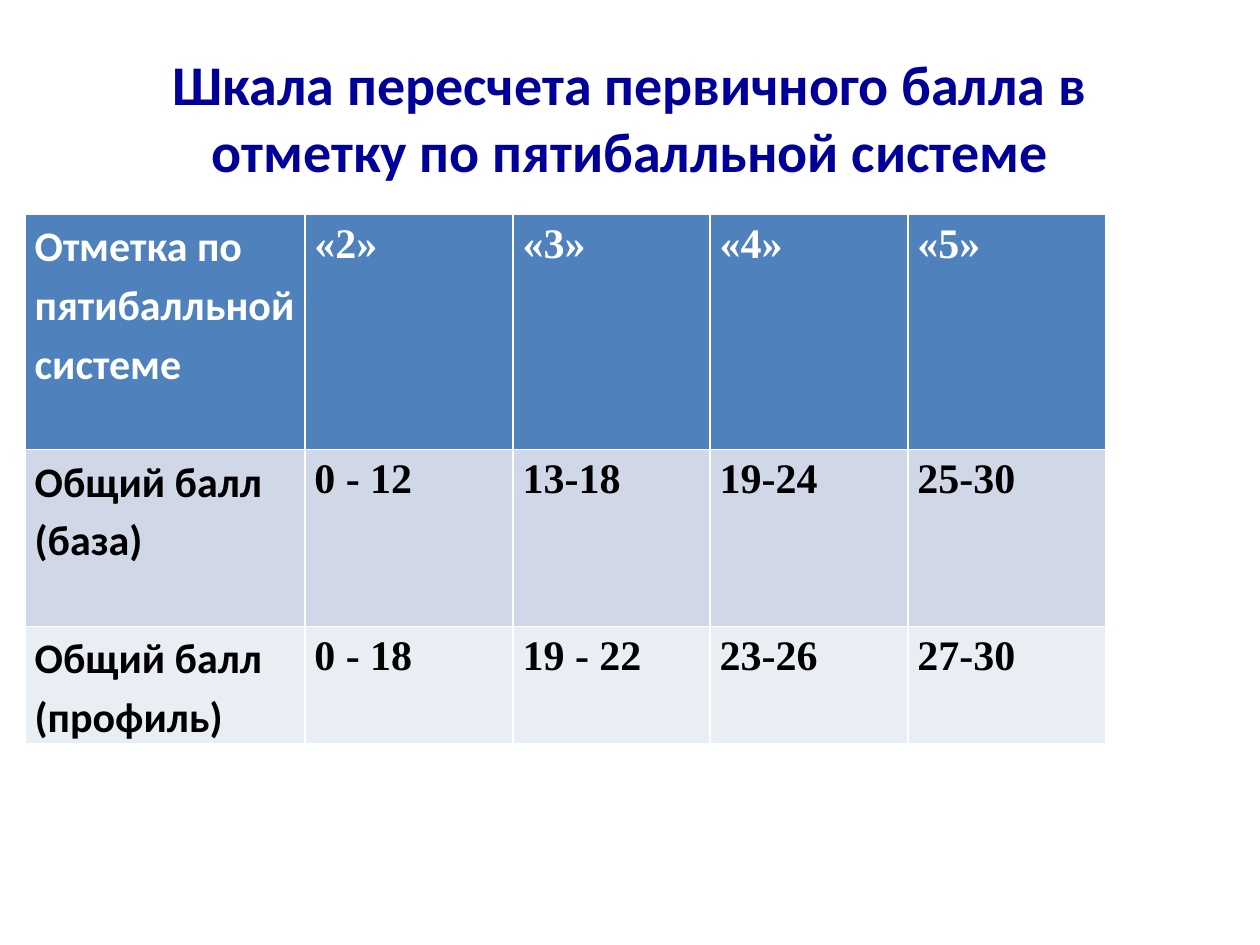
from pptx import Presentation
from pptx.dml.color import RGBColor
from pptx.enum.text import MSO_ANCHOR, PP_ALIGN
from pptx.util import Pt

NAVY = RGBColor(0x00, 0x00, 0x99)
WHITE = RGBColor(0xFF, 0xFF, 0xFF)
BLACK = RGBColor(0x00, 0x00, 0x00)
HEADER_BLUE = RGBColor(0x4F, 0x81, 0xBD)
BAND_DARK = RGBColor(0xD0, 0xD8, 0xE8)
BAND_LIGHT = RGBColor(0xE9, 0xED, 0xF4)

TITLE = "Шкала пересчета первичного балла в отметку по пятибалльной системе"
COLUMN_WIDTHS = (159.8, 119, 112.6, 113, 113)
SCALE = (
    (134.5, HEADER_BLUE, WHITE,
     ("Отметка по пятибалльной системе", "«2»", "«3»", "«4»", "«5»")),
    (101, BAND_DARK, BLACK,
     ("Общий балл (база)", "0 - 12", "13-18", "19-24", "25-30")),
    (67, BAND_LIGHT, BLACK,
     ("Общий балл (профиль)", "0 - 18", "19 - 22", "23-26", "27-30")),
)


def set_font(paragraph, name, size, color):
    """Give a paragraph a bold font."""
    font = paragraph.font
    font.name, font.size, font.bold = name, Pt(size), True
    font.color.rgb = color


def place_title(slide, left, top, width, height):
    """Place the heading in the title placeholder."""
    title = slide.shapes.title
    title.left, title.top = Pt(left), Pt(top)
    title.width, title.height = Pt(width), Pt(height)
    frame = title.text_frame
    frame.text = TITLE
    frame.word_wrap = True
    frame.vertical_anchor = MSO_ANCHOR.MIDDLE
    paragraph = frame.paragraphs[0]
    paragraph.alignment = PP_ALIGN.CENTER
    set_font(paragraph, "Calibri", 32, NAVY)


def fill_cell(cell, text, font_name, fill_color, text_color):
    """Write and format one cell of the scale."""
    cell.fill.solid()
    cell.fill.fore_color.rgb = fill_color
    cell.margin_left = cell.margin_right = Pt(5.4)
    cell.margin_top = cell.margin_bottom = Pt(0)
    cell.text = text
    paragraph = cell.text_frame.paragraphs[0]
    paragraph.line_spacing = 1.15
    set_font(paragraph, font_name, 24, text_color)


def place_scale(slide, left, top, width, height):
    """Place the table that converts points to marks."""
    table = slide.shapes.add_table(
        len(SCALE), len(COLUMN_WIDTHS), Pt(left), Pt(top), Pt(width), Pt(height)
    ).table
    for column, column_width in zip(table.columns, COLUMN_WIDTHS):
        column.width = Pt(column_width * width / sum(COLUMN_WIDTHS))
    heights = sum(row[0] for row in SCALE)
    for row, (row_height, fill_color, text_color, texts) in zip(table.rows, SCALE):
        row.height = Pt(row_height * height / heights)
        for index, (cell, text) in enumerate(zip(row.cells, texts)):
            font_name = "Times New Roman" if index else "Calibri"
            fill_cell(cell, text, font_name, fill_color, text_color)


def main():
    """Build and save the slide."""
    presentation = Presentation()
    presentation.slide_width, presentation.slide_height = Pt(720), Pt(540)
    slide = presentation.slides.add_slide(presentation.slide_layouts[5])
    place_title(slide, 36, 21.6, 648, 90)
    place_scale(slide, 14.4, 122.4, 617.4, 302.5)
    presentation.save("out.pptx")


if __name__ == "__main__":
    main()
